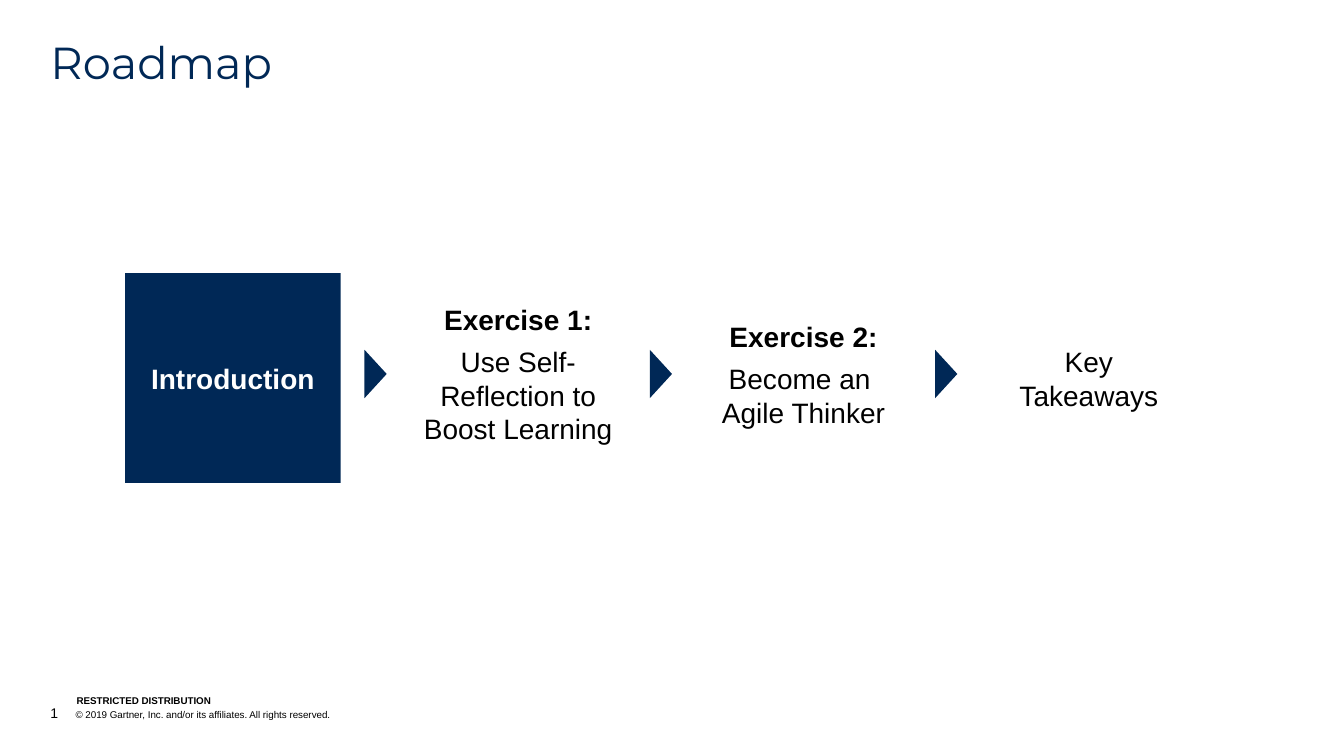
from dataclasses import dataclass
from pptx import Presentation
from pptx.dml.color import RGBColor
from pptx.enum.shapes import MSO_SHAPE
from pptx.enum.text import MSO_ANCHOR, MSO_AUTO_SIZE, PP_ALIGN
from pptx.oxml import parse_xml
from pptx.oxml.ns import nsdecls
from pptx.shapes.autoshape import Shape
from pptx.slide import Slide
from pptx.text.text import TextFrame, _Paragraph
from pptx.util import Inches, Pt

RECT, TRI = MSO_SHAPE.RECTANGLE, MSO_SHAPE.ISOSCELES_TRIANGLE
TOP, MID, BOTTOM = MSO_ANCHOR.TOP, MSO_ANCHOR.MIDDLE, MSO_ANCHOR.BOTTOM
LEFT, CENTER = PP_ALIGN.LEFT, PP_ALIGN.CENTER
FIXED = MSO_AUTO_SIZE.NONE
COLORS = {"navy": "002856", "white": "FFFFFF", "black": "000000"}

# Step grid, in inches
START, STEP = 1.24, 2.83
WIDTH, HEIGHT = 2.14, 2.08
TIP_W, TIP_H, TIP_Y = 0.48, 0.22, 3.6


@dataclass
class Step:
    head: str
    lines: tuple[str, ...]
    top: float
    active: bool = False


@dataclass
class Note:
    left: float
    top: float
    width: float
    height: float
    runs: tuple[tuple[str, int], ...]
    bold: bool = False


STEPS = [
    Step("Introduction", (), 2.71, True),
    Step("Exercise 1:", ("Use Self-Reflection to Boost Learning",), 2.67),
    Step("Exercise 2:", ("Become an ", "Agile Thinker"), 2.67),
    Step("", ("Key", "Takeaways"), 2.71),
]
NOTES = [
    Note(0.5, 6.99, 7.99, 0.17, (
        ("1", 10),
        ("\t© 2019 Gartner, Inc. and/or its affiliates. All rights reserved.", 7),
    )),
    Note(0.76, 6.89, 2.53, 0.12, (("RESTRICTED DISTRIBUTION", 7),), True),
]


def paint(shape: Shape, color: str) -> None:
    shape.shadow.inherit = False
    shape.fill.solid()
    shape.fill.fore_color.rgb = RGBColor.from_string(COLORS[color])
    shape.line.fill.background()


def set_frame(frame: TextFrame, anchor: MSO_ANCHOR) -> None:
    frame.word_wrap = True
    frame.auto_size = FIXED
    frame.vertical_anchor = anchor
    frame.margin_left = frame.margin_right = 0
    frame.margin_top = frame.margin_bottom = 0


def add_run(para: _Paragraph, text: str, size: int, color: str,
            bold: bool = False, face: str = "Arial") -> None:
    run = para.add_run()
    run.text = text
    run.font.name = face
    run.font.size = Pt(size)
    run.font.bold = bold
    run.font.color.rgb = RGBColor.from_string(COLORS[color])


def add_step(slide: Slide, step: Step, left: float) -> None:
    box = (Inches(left), Inches(step.top), Inches(WIDTH), Inches(HEIGHT))
    if step.active:
        shape = slide.shapes.add_shape(RECT, *box)
        paint(shape, "navy")
    else:
        shape = slide.shapes.add_textbox(*box)
    frame = shape.text_frame
    set_frame(frame, MID)
    color = "white" if step.active else "black"
    para = frame.paragraphs[0]
    para.alignment = CENTER
    if step.head:
        add_run(para, step.head, 20, color, True)
    if step.head and step.lines:
        para.space_after = Pt(6)
        para = frame.add_paragraph()
        para.alignment = CENTER
    for i, line in enumerate(step.lines):
        if i:
            para.add_line_break()
        add_run(para, line, 20, color)


def add_tip(slide: Slide, left: float) -> None:
    tip = slide.shapes.add_shape(
        TRI, Inches(left), Inches(TIP_Y), Inches(TIP_W), Inches(TIP_H))
    tip.rotation = 90
    paint(tip, "navy")


def add_note(slide: Slide, note: Note) -> None:
    shape = slide.shapes.add_textbox(
        Inches(note.left), Inches(note.top),
        Inches(note.width), Inches(note.height))
    set_frame(shape.text_frame, BOTTOM)
    para = shape.text_frame.paragraphs[0]
    # Hanging indent with a matching tab stop
    indent = Inches(0.25)
    props = para._p.get_or_add_pPr()
    props.set("marL", str(indent))
    props.set("indent", str(-indent))
    props.append(parse_xml(
        f'<a:tabLst {nsdecls("a")}><a:tab pos="{indent}" algn="l"/></a:tabLst>'))
    for text, size in note.runs:
        add_run(para, text, size, "black", note.bold)


def add_title(slide: Slide, text: str) -> None:
    title = slide.shapes.title
    title.left, title.top = Inches(0.5), Inches(0.4)
    title.width, title.height = Inches(12.33), Inches(0.48)
    set_frame(title.text_frame, TOP)
    para = title.text_frame.paragraphs[0]
    para.alignment = LEFT
    para.line_spacing = 0.9
    para.space_after = Pt(12)
    add_run(para, text, 32, "navy", face="Montserrat")


def main() -> None:
    deck = Presentation()
    deck.slide_width, deck.slide_height = Inches(13.33), Inches(7.5)
    slide = deck.slides.add_slide(deck.slide_layouts[5])
    add_title(slide, "Roadmap")

    # Footer
    for note in NOTES:
        add_note(slide, note)

    # Steps, with an arrow centred in each gap
    for i, step in enumerate(STEPS):
        left = START + i * STEP
        add_step(slide, step, left)
        if i < len(STEPS) - 1:
            add_tip(slide, left + (WIDTH + STEP - TIP_W) / 2)

    deck.save("out.pptx")


if __name__ == "__main__":
    main()
